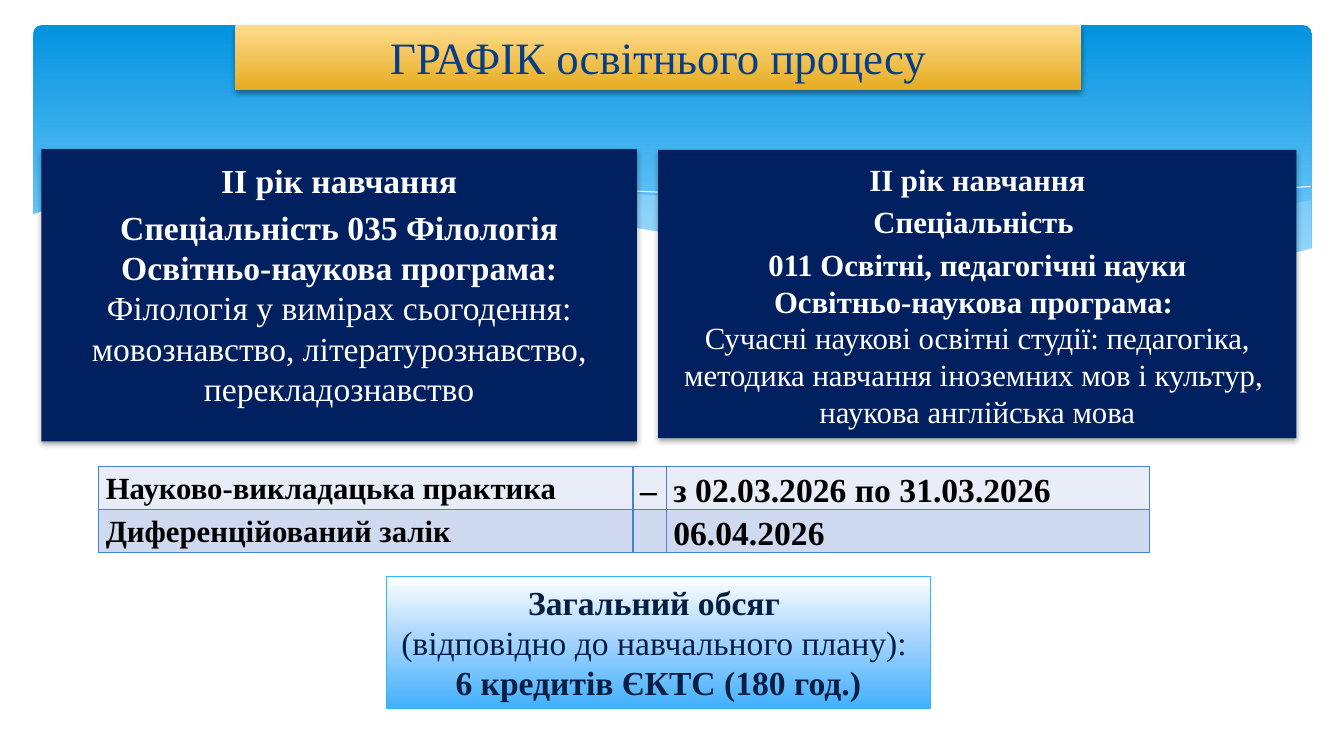
"""Build the study schedule slide with programme cards, a date table and the credit total."""
from dataclasses import dataclass

from lxml.etree import SubElement
from pptx import Presentation
from pptx.dml.color import RGBColor
from pptx.enum.shapes import MSO_SHAPE
from pptx.enum.text import MSO_ANCHOR, PP_ALIGN
from pptx.oxml.ns import qn
from pptx.util import Pt


@dataclass(frozen=True)
class Theme:
    font: str = "Times New Roman"
    title_size: int = 32
    large: int = 24
    small: int = 22
    loose: float = 1.15
    white: str = "FFFFFF"
    black: str = "000000"
    navy: str = "002060"
    ink: str = "041F44"
    title_ink: str = "073E87"
    mist: str = "C6E7FC"
    outline: str = "31B6FD"
    border: str = "4584D3"
    rows: tuple = ("E9EDF7", "CFD9EF")
    sky: tuple = ((0, "0293E0"), (90, "83D3FE"))
    gold: tuple = ((0, "FFDB8E"), (100, "E6AD22"))
    ice: tuple = ((0, "FFFFFF"), (44, "ACD7FF"), (100, "42B0FD"))


THEME = Theme()

BACKDROP = (23.8, 18, 913, 194.4)
WAVES = [
    (THEME.mist, 29, [
        (936.5, 143.3), (897, 149), (855, 155.5), (826, 160.6), (772.6, 170.6),
        (723.6, 178.6), (677.5, 185), (635, 190.8), (663, 194), (702.7, 197.3),
        (738, 199.4), (781, 200), (819.4, 198.7), (854, 195.8), (884, 190.8),
        (911.5, 185), (936.7, 177.8)]),
    (THEME.mist, 40, [
        (856.8, 196.6), (803.5, 190.8), (743.8, 182.9), (677.5, 172.8), (603.4, 159.8),
        (560.2, 151.9), (519, 146.2), (469.4, 139.7), (424, 136), (364.3, 133.9),
        (314.6, 134.6), (275, 137.5), (328.3, 143.3), (388, 151.9), (431.3, 159.8),
        (508.3, 172.8), (577.4, 183.6), (638.6, 191.5), (693.4, 197.3), (741.6, 199.4),
        (784.8, 200.2), (823, 199.4)]),
    (None, 0, [
        (296.6, 140.4), (338.4, 136.1), (385.2, 134.6), (432, 135.4), (489.6, 138.2),
        (558, 144), (637.9, 153.4), (698.4, 162.7), (763.2, 173.5), (833.8, 187.9),
        (871.2, 195.8)]),
    (None, 0, [
        (589, 185), (645.1, 173.5), (691.2, 164.9), (745.2, 155.5), (802.8, 146.9),
        (859.7, 139.7), (900, 135.4), (936, 133.2)]),
    (THEME.white, 100, [
        (938.2, 177.1), (902.2, 186.5), (862.6, 193.7), (816.5, 198), (776.2, 199.4),
        (730.8, 198), (679.7, 194.4), (621.4, 188.6), (555.8, 180), (483.1, 167.8),
        (429.1, 158.4), (375.1, 149), (326.2, 141.8), (280.8, 137.5), (239.8, 133.9),
        (185.8, 132.5), (139.7, 133.2), (102.2, 136.1), (72.7, 140.4), (49.7, 144.7),
        (22.3, 153.4), (22.3, 236.9), (938.2, 236.9)]),
]

TABLE_AT = (70.6, 333.4)
COLUMNS = (381.6, 23.8, 344.9)
ROW_HEIGHT = 30.6
SCHEDULE = [
    ("Науково-викладацька практика", "–", "з 02.03.2026 по 31.03.2026"),
    ("Диференційований залік", "", "06.04.2026"),
]

PROGRAMME = "Освітньо-наукова програма: "
PANELS = [
    dict(at=(29.5, 106.6, 425.5, 208.8), fill=THEME.navy, shadow=True,
         size=THEME.large, ink=THEME.white, paragraphs=[
             (THEME.loose, [("ІІ рік навчання", True)]),
             (THEME.loose, [("Спеціальність 035 Філологія", True)]),
             (None, [(PROGRAMME, True),
                     ("Філологія у вимірах сьогодення: мовознавство, "
                      "літературознавство, перекладознавство", False)])]),
    dict(at=(275.8, 411.8, 388.8, 94.4), fill=THEME.ice, line=THEME.outline,
         size=THEME.large, ink=THEME.ink, paragraphs=[
             (None, [("Загальний обсяг ", True)]),
             (None, [("(відповідно до навчального плану): ", False)]),
             (None, [("6 кредитів ЄКТС (180 год.)", True)])]),
    dict(at=(168.2, 18, 604.1, 46.1), fill=THEME.gold, shadow=True,
         size=THEME.title_size, ink=THEME.title_ink, paragraphs=[
             (None, [("ГРАФІК освітнього процесу", False)])]),
    dict(at=(470.2, 107.1, 455.8, 205.9), fill=THEME.navy, shadow=True,
         size=THEME.small, ink=THEME.white, paragraphs=[
             (THEME.loose, [("ІІ рік навчання", True)]),
             (THEME.loose, [("Спеціальність \n011 Освітні, педагогічні науки", True)]),
             (None, [(PROGRAMME + "\n", True),
                     ("Сучасні наукові освітні студії: педагогіка, методика навчання "
                      "іноземних мов і культур, \nнаукова англійська мова", False)])]),
]


def add_color(parent, value, alpha=100):
    color = SubElement(parent, qn("a:srgbClr"), val=value)
    if alpha < 100:
        SubElement(color, qn("a:alpha"), val=str(alpha * 1000))


def paint(shape, fill, line=None, width=0.75):
    shape.shadow.inherit = False
    if fill is None:
        shape.fill.background()
    elif isinstance(fill, str):
        shape.fill.solid()
        shape.fill.fore_color.rgb = RGBColor.from_string(fill)
    else:
        shape.fill.gradient()
        shape.fill.gradient_angle = 270
        stops = shape._element.spPr.find(qn("a:gradFill")).find(qn("a:gsLst"))
        for stop in list(stops):
            stops.remove(stop)
        for position, value in fill:
            add_color(SubElement(stops, qn("a:gs"), pos=str(position * 1000)), value)
    if line:
        shape.line.color.rgb = RGBColor.from_string(line)
        shape.line.width = Pt(width)
    else:
        shape.line.fill.background()


def add_shadow(shape):
    effects = shape._element.spPr.find(qn("a:effectLst"))
    shadow = SubElement(effects, qn("a:outerShdw"), blurRad=str(Pt(4)),
                        dist=str(Pt(2)), dir="5400000", rotWithShape="0")
    add_color(shadow, THEME.black, 38)


def style(paragraph, size, ink, bold=None, spacing=None):
    font = paragraph.font
    font.name, font.size, font.bold = THEME.font, Pt(size), bold
    font.color.rgb = RGBColor.from_string(ink)
    if spacing:
        paragraph.line_spacing = spacing


def add_wave(page, fill, alpha, points):
    corners = [(Pt(x), Pt(y)) for x, y in points]
    builder = page.shapes.build_freeform(*corners[0])
    builder.add_line_segments(corners[1:], close=fill is not None)
    wave = builder.convert_to_shape()
    paint(wave, fill, None if fill else THEME.white, 0)
    if fill and alpha < 100:
        color = wave._element.spPr.find(qn("a:solidFill"))[0]
        SubElement(color, qn("a:alpha"), val=str(alpha * 1000))


def add_panel(page, at, fill, size, ink, paragraphs, line=None, shadow=False):
    panel = page.shapes.add_shape(MSO_SHAPE.RECTANGLE, *map(Pt, at))
    paint(panel, fill, line)
    if shadow:
        add_shadow(panel)
    frame = panel.text_frame
    frame.word_wrap = True
    frame.vertical_anchor = MSO_ANCHOR.TOP
    for index, (spacing, spans) in enumerate(paragraphs):
        para = frame.add_paragraph() if index else frame.paragraphs[0]
        para.alignment = PP_ALIGN.CENTER
        style(para, size, ink, spacing=spacing)
        for text, bold in spans:
            for number, piece in enumerate(text.split("\n")):
                if number:
                    para.add_line_break()
                if piece:
                    span = para.add_run()
                    span.text, span.font.bold = piece, bold


def add_schedule(page):
    table = page.shapes.add_table(
        len(SCHEDULE), len(COLUMNS), *map(Pt, TABLE_AT),
        Pt(sum(COLUMNS)), Pt(ROW_HEIGHT * len(SCHEDULE))).table
    table.first_row = table.horz_banding = False
    for column, width in zip(table.columns, COLUMNS):
        column.width = Pt(width)
    for row, (texts, fill) in enumerate(zip(SCHEDULE, THEME.rows)):
        table.rows[row].height = Pt(ROW_HEIGHT)
        for column, text in enumerate(texts):
            cell = table.cell(row, column)
            cell.margin_left = cell.margin_right = Pt(5)
            cell.margin_top = cell.margin_bottom = 0
            properties = cell._tc.get_or_add_tcPr()
            for side in ("a:lnL", "a:lnR", "a:lnT", "a:lnB"):
                edge = SubElement(properties, qn(side), w=str(Pt(1)))
                add_color(SubElement(edge, qn("a:solidFill")), THEME.border)
            cell.fill.solid()
            cell.fill.fore_color.rgb = RGBColor.from_string(fill)
            para = cell.text_frame.paragraphs[0]
            para.text = text
            size = THEME.large if column else THEME.small
            style(para, size, THEME.black, True, THEME.loose)


def main():
    deck = Presentation()
    deck.slide_width, deck.slide_height = Pt(960), Pt(540)
    page = deck.slides.add_slide(deck.slide_layouts[6])
    backdrop = page.shapes.add_shape(MSO_SHAPE.ROUNDED_RECTANGLE, *map(Pt, BACKDROP))
    backdrop.adjustments[0] = 0.03
    paint(backdrop, THEME.sky)
    for wave in WAVES:
        add_wave(page, *wave)
    add_schedule(page)
    for panel in PANELS:
        add_panel(page, **panel)
    deck.save("out.pptx")


if __name__ == "__main__":
    main()
